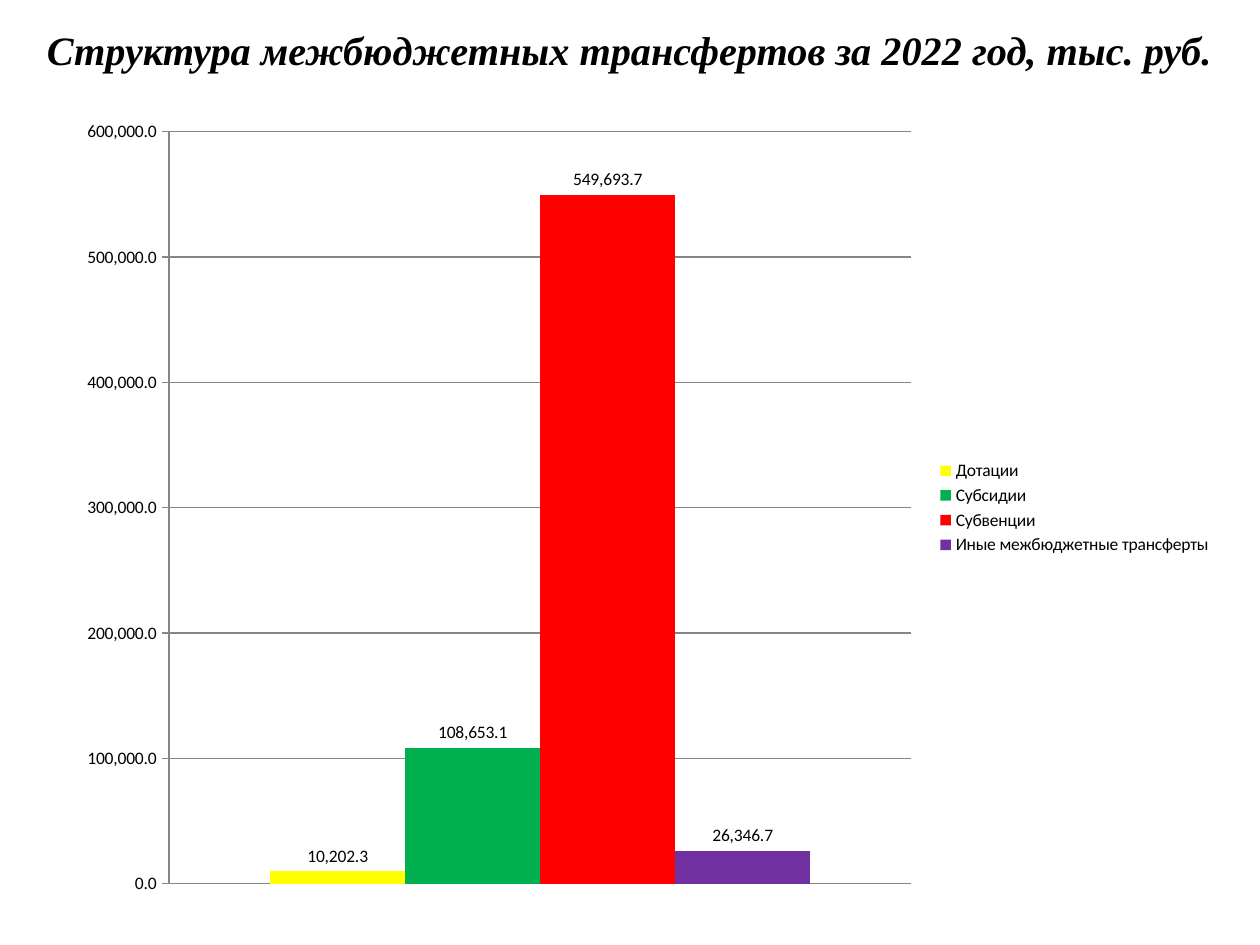
from pptx import Presentation
from pptx.chart.data import CategoryChartData
from pptx.dml.color import RGBColor
from pptx.enum.chart import XL_CHART_TYPE as ChartType, XL_LABEL_POSITION as LabelPos
from pptx.enum.chart import XL_LEGEND_POSITION as LegendPos, XL_TICK_MARK as TickMark
from pptx.enum.text import MSO_ANCHOR as Anchor, PP_ALIGN as Align
from pptx.util import Pt

BLACK = RGBColor(0x00, 0x00, 0x00)
GRAY = RGBColor(0x86, 0x86, 0x86)
YELLOW = RGBColor(0xFF, 0xFF, 0x00)
GREEN = RGBColor(0x00, 0xB0, 0x50)
RED = RGBColor(0xFF, 0x00, 0x00)
PURPLE = RGBColor(0x70, 0x30, 0xA0)
NUMBER_FORMAT = "#,##0.0"

TRANSFERS = [
    ("Дотации", 10202.3, YELLOW),
    ("Субсидии", 108653.1, GREEN),
    ("Субвенции", 549693.7, RED),
    ("Иные межбюджетные трансферты", 26346.7, PURPLE),
]


def apply_format(target, values):
    for key, value in values.items():
        setattr(target, key, value)


prs = Presentation()
apply_format(prs, {"slide_width": Pt(720), "slide_height": Pt(540)})
slide = prs.slides.add_slide(prs.slide_layouts[6])

heading = slide.shapes.add_textbox(0, 0, Pt(720), Pt(57)).text_frame
apply_format(heading, {"word_wrap": True, "vertical_anchor": Anchor.MIDDLE})
heading_line = heading.paragraphs[0]
heading_line.alignment = Align.CENTER
heading_run = heading_line.add_run()
heading_run.text = "Структура межбюджетных трансфертов за 2022 год, тыс. руб."
apply_format(heading_run.font, {
    "name": "Times New Roman", "size": Pt(23), "bold": True, "italic": True})
heading_run.font.color.rgb = BLACK

amounts = CategoryChartData(number_format=NUMBER_FORMAT)
amounts.categories = ["1"]
for transfer, amount, color in TRANSFERS:
    amounts.add_series(transfer, [amount])

chart = slide.shapes.add_chart(
    ChartType.COLUMN_CLUSTERED, Pt(36.7), Pt(60.5), Pt(663), Pt(459.4), amounts).chart
apply_format(chart, {"has_title": False, "has_legend": True})
apply_format(chart.font, {"name": "Calibri", "size": Pt(10)})
chart.font.color.rgb = BLACK
apply_format(chart.legend, {"position": LegendPos.RIGHT, "include_in_layout": False})

chart.category_axis.visible = False
amount_axis = chart.value_axis
apply_format(amount_axis, {
    "minimum_scale": 0, "maximum_scale": 600000, "major_unit": 100000,
    "has_major_gridlines": True, "major_tick_mark": TickMark.OUTSIDE,
    "minor_tick_mark": TickMark.NONE})
apply_format(amount_axis.tick_labels, {
    "number_format": NUMBER_FORMAT, "number_format_is_linked": False})
for line in (amount_axis.format.line, amount_axis.major_gridlines.format.line):
    line.color.rgb = GRAY
    line.width = Pt(0.75)

columns = chart.plots[0]
apply_format(columns, {"gap_width": 150, "overlap": 0, "vary_by_categories": False})
for series, (transfer, amount, color) in zip(columns.series, TRANSFERS):
    series.format.fill.solid()
    series.format.fill.fore_color.rgb = color
    apply_format(series.data_labels, {
        "show_value": True, "position": LabelPos.OUTSIDE_END,
        "number_format": NUMBER_FORMAT, "number_format_is_linked": False})

prs.save("out.pptx")
